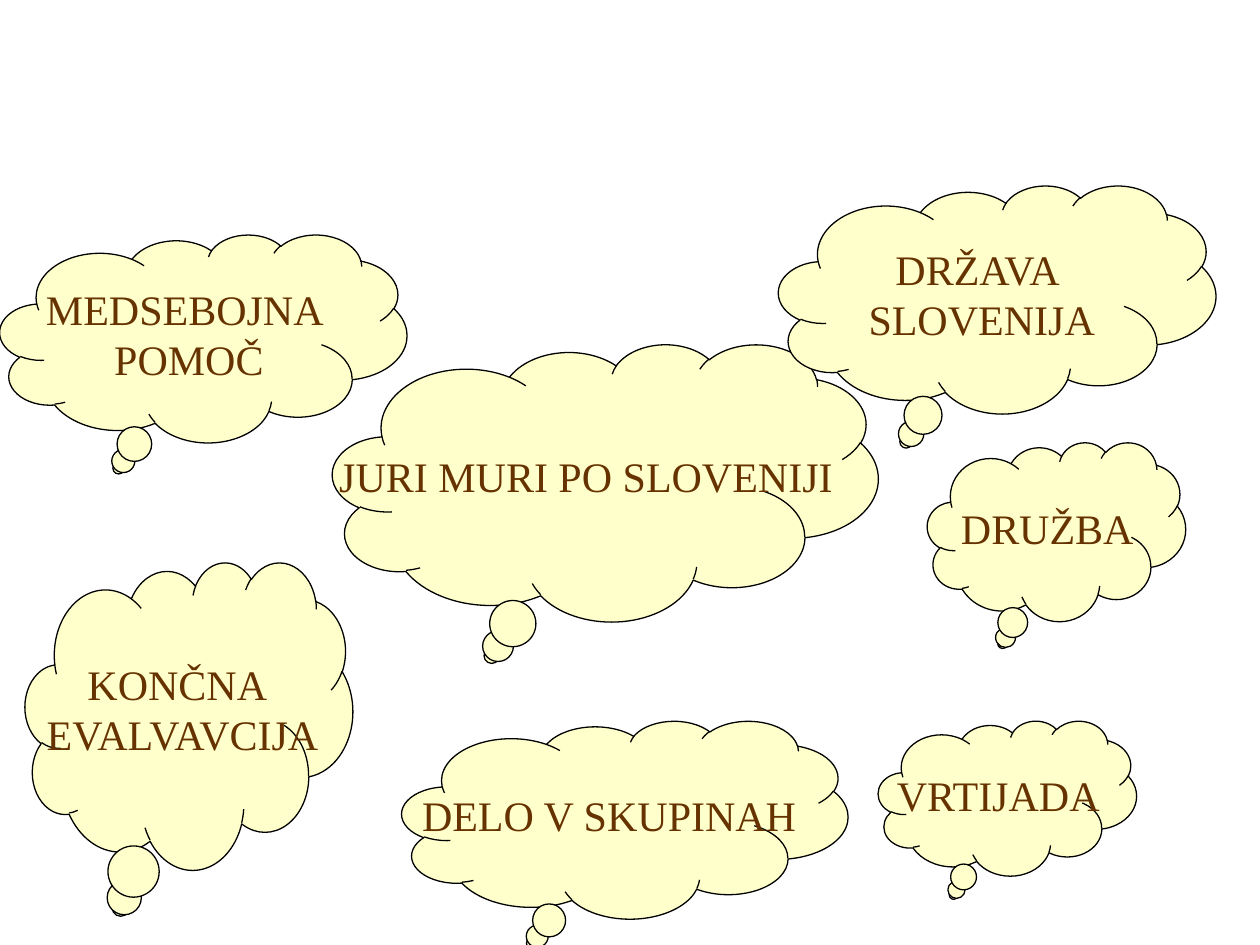
from pptx import Presentation
from pptx.dml.color import RGBColor
from pptx.enum.shapes import MSO_SHAPE
from pptx.enum.text import MSO_ANCHOR, PP_ALIGN
from pptx.util import Emu, Pt

PX = 9144  # 100 px to the inch
COLORS = {"cloud": "FFFFCC", "outline": "000000", "text": "663300"}

# Back to front: left, top, width, height in px, then the lines of text
CLOUDS = [
    ((319, 572, 354, 157), ["DELO V SKUPINAH"]),
    ((0, 186, 323, 165), ["MEDSEBOJNA ", "POMOČ"]),
    ((736, 351, 205, 142), ["DRUŽBA"]),
    ((20, 446, 260, 244), ["KONČNA", " EVALVAVCIJA"]),
    ((697, 572, 205, 123), ["VRTIJADA"]),
    ((264, 273, 433, 220), ["JURI MURI PO SLOVENIJI"]),
    ((618, 147, 347, 181), ["DRŽAVA ", "SLOVENIJA"]),
]


def px(length):
    return Emu(length * PX)


def color(name):
    return RGBColor.from_string(COLORS[name])


def add_cloud(page, box, lines):
    cloud = page.shapes.add_shape(MSO_SHAPE.CLOUD_CALLOUT, *map(px, box))
    cloud.shadow.inherit = False
    cloud.fill.solid()
    cloud.fill.fore_color.rgb = color("cloud")
    cloud.line.color.rgb = color("outline")
    cloud.line.width = Pt(0.75)

    frame = cloud.text_frame
    frame.word_wrap = False
    frame.vertical_anchor = MSO_ANCHOR.MIDDLE
    for index, line in enumerate(lines):
        paragraph = frame.add_paragraph() if index else frame.paragraphs[0]
        paragraph.text = line
        paragraph.alignment = PP_ALIGN.CENTER
        paragraph.font.name = "Times New Roman"
        paragraph.font.size = Pt(24)
        paragraph.font.color.rgb = color("text")


def main():
    deck = Presentation()
    deck.slide_width, deck.slide_height = px(1000), px(750)
    page = deck.slides.add_slide(deck.slide_layouts[6])
    for box, lines in CLOUDS:
        add_cloud(page, box, lines)
    deck.save("out.pptx")


if __name__ == "__main__":
    main()
